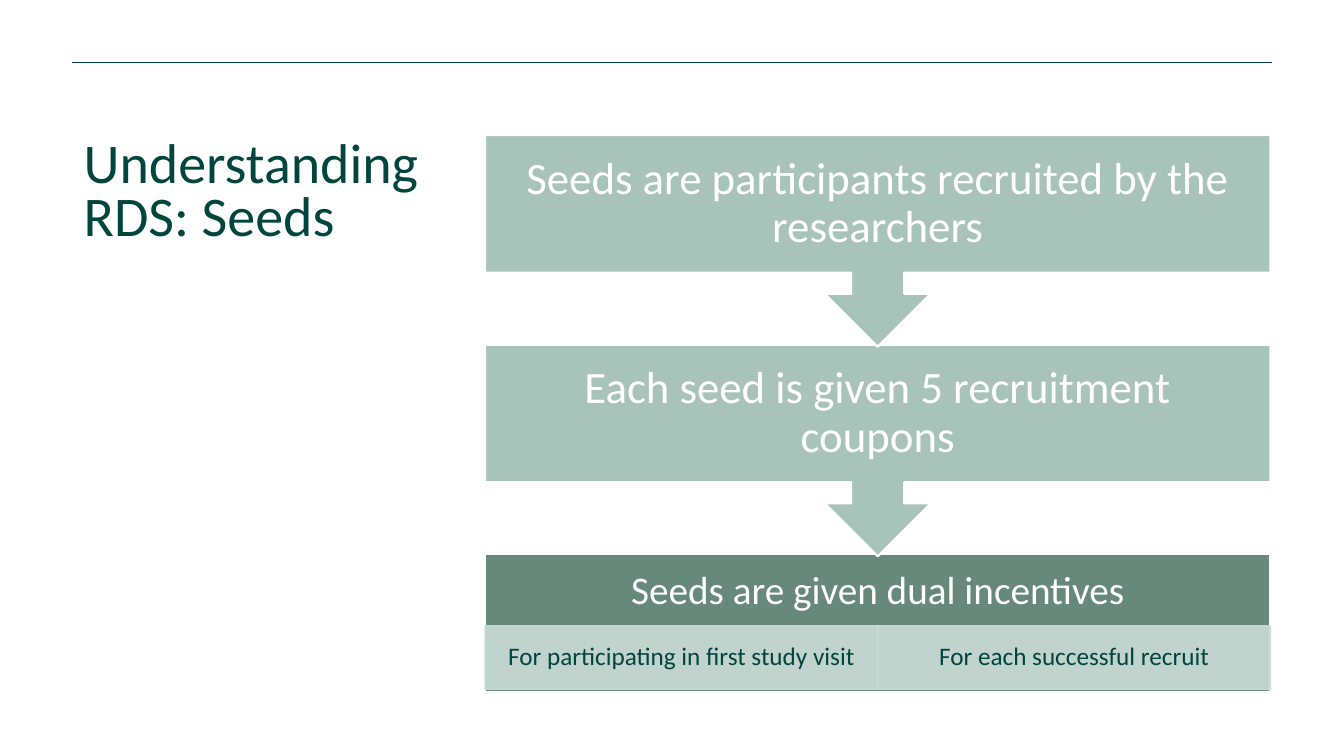
from dataclasses import dataclass

from lxml import etree
from pptx import Presentation
from pptx.dml.color import RGBColor
from pptx.enum.shapes import MSO_CONNECTOR, MSO_SHAPE
from pptx.enum.text import MSO_ANCHOR, MSO_AUTO_SIZE, PP_ALIGN
from pptx.oxml.ns import qn
from pptx.util import Inches, Pt

RECT = MSO_SHAPE.RECTANGLE
CALLOUT = MSO_SHAPE.DOWN_ARROW_CALLOUT
STRAIGHT = MSO_CONNECTOR.STRAIGHT
TOP, MIDDLE = MSO_ANCHOR.TOP, MSO_ANCHOR.MIDDLE
LEFT, CENTER = PP_ALIGN.LEFT, PP_ALIGN.CENTER
NO_FIT = MSO_AUTO_SIZE.NONE
TITLE_ONLY = 5


@dataclass(frozen=True)
class Theme:
    font: str = "Calibri"
    dark: RGBColor = RGBColor(0x01, 0x46, 0x3E)
    step: RGBColor = RGBColor(0xA8, 0xC3, 0xB9)
    final: RGBColor = RGBColor(0x66, 0x89, 0x7C)
    detail: RGBColor = RGBColor(0xCA, 0xDC, 0xD5)
    white: RGBColor = RGBColor(0xFF, 0xFF, 0xFF)
    title_size: int = 40
    step_size: int = 32
    final_size: int = 28
    detail_size: int = 18


THEME = Theme()
FLOW_LEFT, FLOW_TOP, FLOW_WIDTH = 4.81, 1.34, 7.79
STEP_PITCH, STEP_HEIGHT, FINAL_HEIGHT = 2.08, 2.1, 1.37
DETAIL_TOP, DETAIL_HEIGHT = 6.21, 0.63

STEPS = [
    "Seeds are participants recruited by the researchers",
    "Each seed is given 5 recruitment coupons",
]
INCENTIVES = [
    "For participating in first study visit",
    "For each successful recruit",
]


def set_all(obj, values):
    for name, value in values.items():
        setattr(obj, name, value)


def write(sp, text, size, color, align=CENTER, anchor=MIDDLE, spacing=0.9,
          margins=(0.1, 0.05, 0.1, 0.05)):
    tf = sp.text_frame
    left, top, right, bottom = map(Inches, margins)
    set_all(tf, {"word_wrap": True, "auto_size": NO_FIT,
                 "vertical_anchor": anchor, "margin_left": left,
                 "margin_top": top, "margin_right": right,
                 "margin_bottom": bottom})
    p = tf.paragraphs[0]
    set_all(p, {"alignment": align, "line_spacing": spacing})
    r = p.add_run()
    r.text = text
    set_all(r.font, {"name": THEME.font, "size": Pt(size)})
    r.font.color.rgb = color


def add_box(slide, kind, box, fill, line, line_width):
    sp = slide.shapes.add_shape(kind, *map(Inches, box))
    sp.shadow.inherit = False
    sp.fill.solid()
    sp.fill.fore_color.rgb = fill
    sp.line.color.rgb = line
    sp.line.width = Pt(line_width)
    return sp


def set_opacity(sp, percent):
    for color in sp._element.spPr.iter(qn("a:srgbClr")):
        alpha = etree.SubElement(color, qn("a:alpha"))
        alpha.set("val", str(percent * 1000))


def add_rule(slide, left, right, y):
    line = slide.shapes.add_connector(
        STRAIGHT, Inches(left), Inches(y), Inches(right), Inches(y))
    line.line.color.rgb = THEME.dark
    line.line.width = Pt(1)
    etree.SubElement(line._element.spPr, qn("a:effectLst"))


def add_title(slide, text):
    sp = slide.shapes.title
    set_all(sp, {"left": Inches(0.73), "top": Inches(FLOW_TOP),
                 "width": Inches(4.08), "height": Inches(5.53)})
    write(sp, text, THEME.title_size, THEME.dark, LEFT, TOP, 0.8)


def add_final(slide, text):
    top = FLOW_TOP + len(STEPS) * STEP_PITCH
    sp = add_box(slide, RECT, (FLOW_LEFT, top, FLOW_WIDTH, FINAL_HEIGHT),
                 THEME.final, THEME.white, 1.5)
    write(sp, text, THEME.final_size, THEME.white,
          margins=(0.22, 0.1, 0.22, 0.73))


def add_incentive(slide, index, text):
    width = FLOW_WIDTH / len(INCENTIVES)
    box = (FLOW_LEFT + index * width, DETAIL_TOP, width, DETAIL_HEIGHT)
    sp = add_box(slide, RECT, box, THEME.detail, THEME.detail, 1)
    set_opacity(sp, 90)
    write(sp, text, THEME.detail_size, THEME.dark,
          margins=(0.14, 0.03, 0.14, 0.03))


def add_step(slide, index, text):
    box = (FLOW_LEFT, FLOW_TOP + index * STEP_PITCH, FLOW_WIDTH, STEP_HEIGHT)
    sp = add_box(slide, CALLOUT, box, THEME.step, THEME.white, 1.5)
    write(sp, text, THEME.step_size, THEME.white,
          margins=(0.25, 0.25, 0.25, 0.25))


def main():
    prs = Presentation()
    prs.slide_width, prs.slide_height = Inches(13.33), Inches(7.5)
    slide = prs.slides.add_slide(prs.slide_layouts[TITLE_ONLY])
    add_rule(slide, 0.71, 12.62, 0.62)
    add_title(slide, "Understanding RDS: Seeds")
    add_final(slide, "Seeds are given dual incentives")
    for index, text in enumerate(INCENTIVES):
        add_incentive(slide, index, text)
    for index, text in reversed(list(enumerate(STEPS))):
        add_step(slide, index, text)
    prs.save("out.pptx")


if __name__ == "__main__":
    main()
